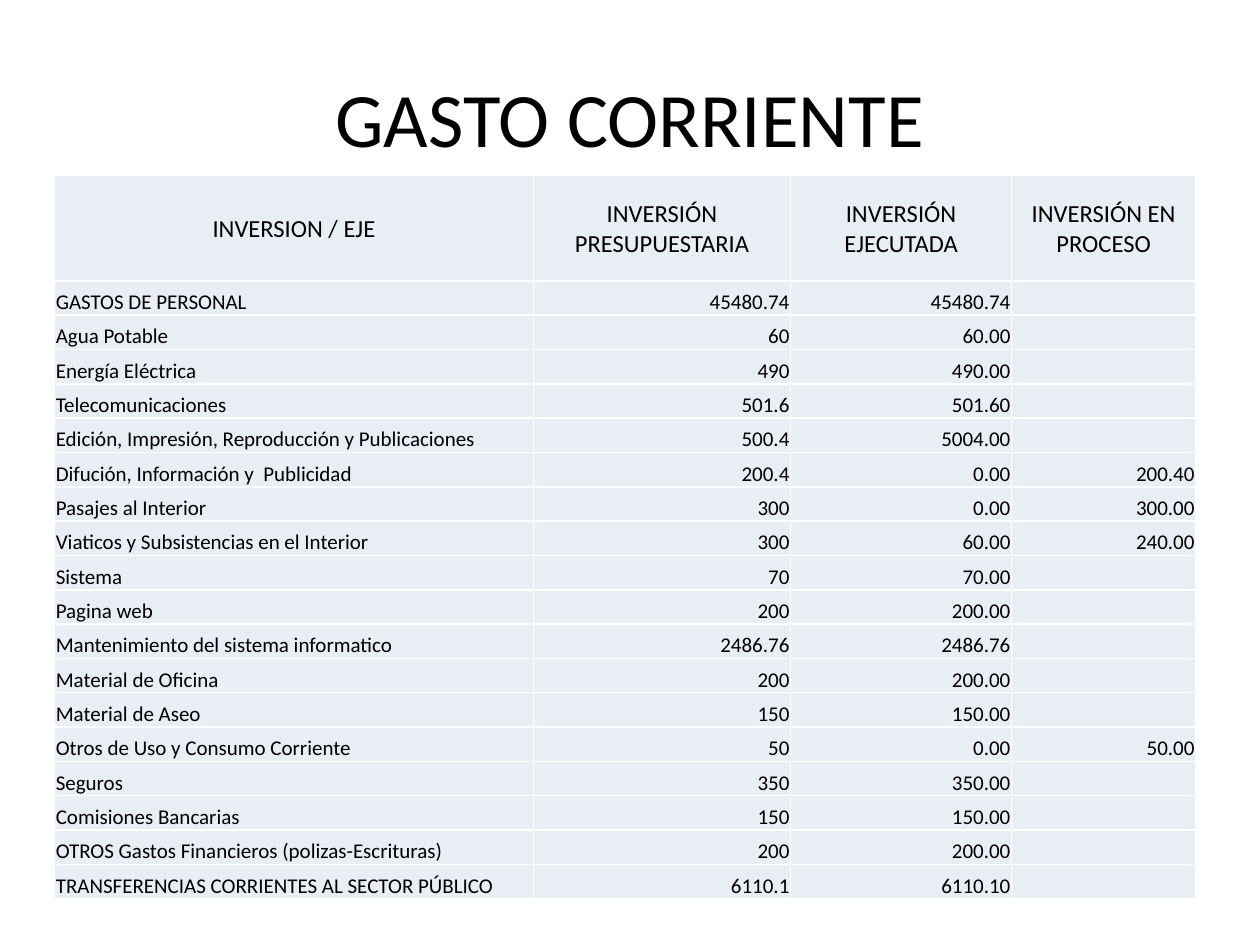
from lxml import etree
from pptx import Presentation
from pptx import util as u
from pptx.dml.color import RGBColor
from pptx.enum import text
from pptx.oxml import ns

BLACK = RGBColor(0x00, 0x00, 0x00)
WHITE = RGBColor(0xFF, 0xFF, 0xFF)
PALE_BLUE = RGBColor(0xE9, 0xED, 0xF4)

HEADERS = ("INVERSION / EJE", "INVERSIÓN PRESUPUESTARIA", "INVERSIÓN EJECUTADA", "INVERSIÓN EN PROCESO")
EXPENSES = (
    ("GASTOS DE PERSONAL", "45480.74", "45480.74", ""),
    ("Agua Potable", "60", "60.00", ""),
    ("Energía Eléctrica", "490", "490.00", ""),
    ("Telecomunicaciones", "501.6", "501.60", ""),
    ("Edición, Impresión, Reproducción y Publicaciones", "500.4", "5004.00", ""),
    ("Difución, Información y  Publicidad", "200.4", "0.00", "200.40"),
    ("Pasajes al Interior", "300", "0.00", "300.00"),
    ("Viaticos y Subsistencias en el Interior", "300", "60.00", "240.00"),
    ("Sistema", "70", "70.00", ""),
    ("Pagina web", "200", "200.00", ""),
    ("Mantenimiento del sistema informatico", "2486.76", "2486.76", ""),
    ("Material de Oficina", "200", "200.00", ""),
    ("Material de Aseo", "150", "150.00", ""),
    ("Otros de Uso y Consumo Corriente", "50", "0.00", "50.00"),
    ("Seguros", "350", "350.00", ""),
    ("Comisiones Bancarias", "150", "150.00", ""),
    ("OTROS Gastos Financieros (polizas-Escrituras)", "200", "200.00", ""),
    ("TRANSFERENCIAS CORRIENTES AL SECTOR PÚBLICO", "6110.1", "6110.10", ""),
)
COLUMN_WIDTHS = (273.6, 147, 126.3, 105.2)
HEADER_HEIGHT = 60.2
ROW_HEIGHT = 19.64


def write(frame, content, size, align, font="Calibri", color=BLACK):
    paragraph = frame.paragraphs[0]
    paragraph.alignment = align
    if not content:
        paragraph._p.get_or_add_endParaRPr().set("sz", str(size * 100))
        return
    run = paragraph.add_run()
    run.text = content
    run.font.name = font
    run.font.size = u.Pt(size)
    run.font.color.rgb = color


class SlideBuilder:
    def __init__(self, slide, fill=PALE_BLUE, border=WHITE, border_width=1):
        self.slide = slide
        self.fill = fill
        self.border = border
        self.border_width = border_width

    def title(self, content, left, top, width, height):
        shape = self.slide.shapes.add_textbox(u.Pt(left), u.Pt(top), u.Pt(width), u.Pt(height))
        frame = shape.text_frame
        frame.word_wrap = True
        frame.vertical_anchor = text.MSO_ANCHOR.MIDDLE
        write(frame, content, size=44, align=text.PP_ALIGN.CENTER)

    def table(self, headers, records, left, top):
        height = HEADER_HEIGHT + ROW_HEIGHT * len(records)
        shape = self.slide.shapes.add_table(
            len(records) + 1, len(headers), u.Pt(left), u.Pt(top), u.Pt(sum(COLUMN_WIDTHS)), u.Pt(height)
        )
        table = shape.table
        for column, width in zip(table.columns, COLUMN_WIDTHS):
            column.width = u.Pt(width)
        for index, record in enumerate((headers, *records)):
            is_header = index == 0
            table.rows[index].height = u.Pt(HEADER_HEIGHT if is_header else ROW_HEIGHT)
            for position, content in enumerate(record):
                if is_header:
                    align = text.PP_ALIGN.CENTER
                else:
                    align = text.PP_ALIGN.RIGHT if position else text.PP_ALIGN.LEFT
                cell = table.cell(index, position)
                self.style_cell(cell, text.MSO_ANCHOR.MIDDLE if is_header else text.MSO_ANCHOR.BOTTOM)
                write(cell.text_frame, content, size=14 if is_header else 12, align=align)

    def style_cell(self, cell, anchor):
        cell.margin_left = cell.margin_right = cell.margin_top = u.Pt(0.7)
        cell.margin_bottom = u.Pt(0)
        cell.vertical_anchor = anchor
        properties = cell._tc.get_or_add_tcPr()
        for side in ("a:lnL", "a:lnR", "a:lnT", "a:lnB"):
            line = etree.SubElement(properties, ns.qn(side), w=str(u.Pt(self.border_width)))
            solid = etree.SubElement(line, ns.qn("a:solidFill"))
            etree.SubElement(solid, ns.qn("a:srgbClr"), val=str(self.border))
        cell.fill.solid()
        cell.fill.fore_color.rgb = self.fill


def main():
    presentation = Presentation()
    presentation.slide_width = u.Pt(720)
    presentation.slide_height = u.Pt(540)
    slide = presentation.slides.add_slide(presentation.slide_layouts[6])
    builder = SlideBuilder(slide)
    builder.title("GASTO CORRIENTE", 36, 21.6, 648, 90)
    builder.table(HEADERS, EXPENSES, 31.2, 100.3)
    presentation.save("out.pptx")


if __name__ == "__main__":
    main()
